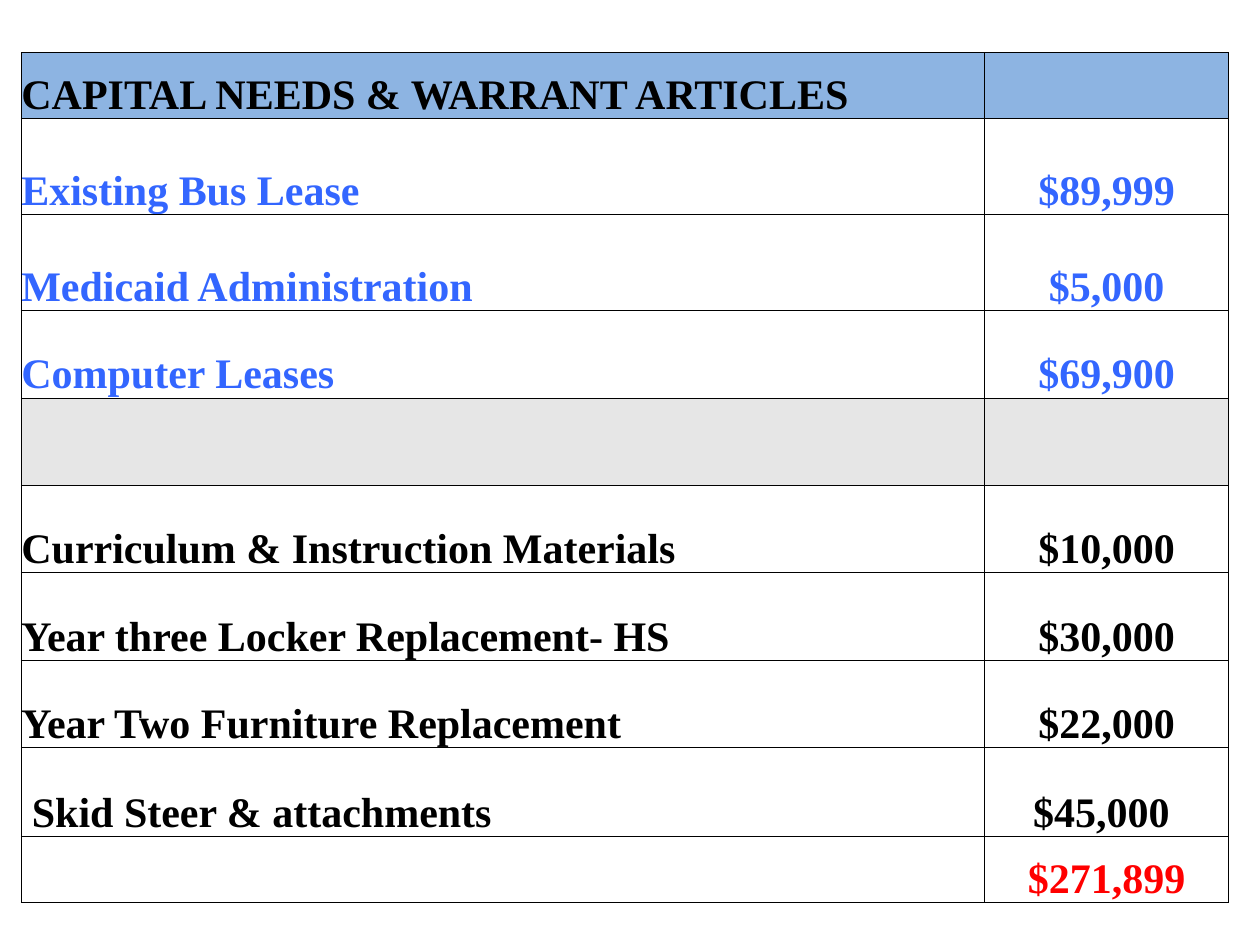
"""Build the capital needs and warrant articles budget slide."""
from lxml import etree
from pptx import Presentation
from pptx.dml.color import RGBColor
from pptx.enum import text
from pptx.oxml import ns
from pptx.util import Pt

BLACK = RGBColor(0x00, 0x00, 0x00)
BLUE = RGBColor(0x33, 0x66, 0xFF)
RED = RGBColor(0xFF, 0x00, 0x00)
HEADER = RGBColor(0x8D, 0xB4, 0xE2)
GREY = RGBColor(0xE6, 0xE6, 0xE6)

# label, amount, text colour, fill, row height
ARTICLES = [
    ("CAPITAL NEEDS & WARRANT ARTICLES", "", BLACK, HEADER, 37.7),
    ("Existing Bus Lease", "$89,999", BLUE, None, 54.9),
    ("Medicaid Administration", "$5,000", BLUE, None, 54.9),
    ("Computer Leases", "$69,900", BLUE, None, 50),
    ("", "", BLACK, GREY, 50),
    ("Curriculum & Instruction Materials", "$10,000", BLACK, None, 50),
    ("Year three Locker Replacement- HS", "$30,000", BLACK, None, 50),
    ("Year Two Furniture Replacement", "$22,000", BLACK, None, 50),
    (" Skid Steer & attachments", "$45,000 ", BLACK, None, 50.8),
    ("", "$271,899", RED, None, 37.7),
]
WIDTHS = [550.5, 139.3]


def add_borders(cell):
    properties = cell._tc.get_or_add_tcPr()
    for side in ("a:lnL", "a:lnR", "a:lnT", "a:lnB"):
        line = etree.SubElement(properties, ns.qn(side), w=str(Pt(0.5)))
        solid = etree.SubElement(line, ns.qn("a:solidFill"))
        etree.SubElement(solid, ns.qn("a:srgbClr"), val=str(BLACK))


deck = Presentation()
deck.slide_width, deck.slide_height = Pt(720), Pt(540)
slide = deck.slides.add_slide(deck.slide_layouts[6])

budget = slide.shapes.add_table(
    len(ARTICLES), len(WIDTHS), Pt(12.2), Pt(30),
    Pt(sum(WIDTHS)), Pt(sum(article[-1] for article in ARTICLES))).table
budget.first_row = budget.horz_banding = False
for column, width in zip(budget.columns, WIDTHS):
    column.width = Pt(width)

for row, (label, amount, color, fill, height) in enumerate(ARTICLES):
    budget.rows[row].height = Pt(height)
    for col, wording in enumerate((label, amount)):
        cell = budget.cell(row, col)
        cell.margin_left = cell.margin_right = cell.margin_top = cell.margin_bottom = 0
        cell.vertical_anchor = text.MSO_ANCHOR.BOTTOM
        add_borders(cell)
        if fill is None:
            cell.fill.background()
        else:
            cell.fill.solid()
            cell.fill.fore_color.rgb = fill
        if wording:
            paragraph = cell.text_frame.paragraphs[0]
            paragraph.alignment = text.PP_ALIGN.CENTER if col else text.PP_ALIGN.LEFT
            run = paragraph.add_run()
            run.text = wording
            run.font.name = "Times New Roman"
            run.font.size = Pt(24)
            run.font.bold = True
            run.font.color.rgb = color

deck.save("out.pptx")
